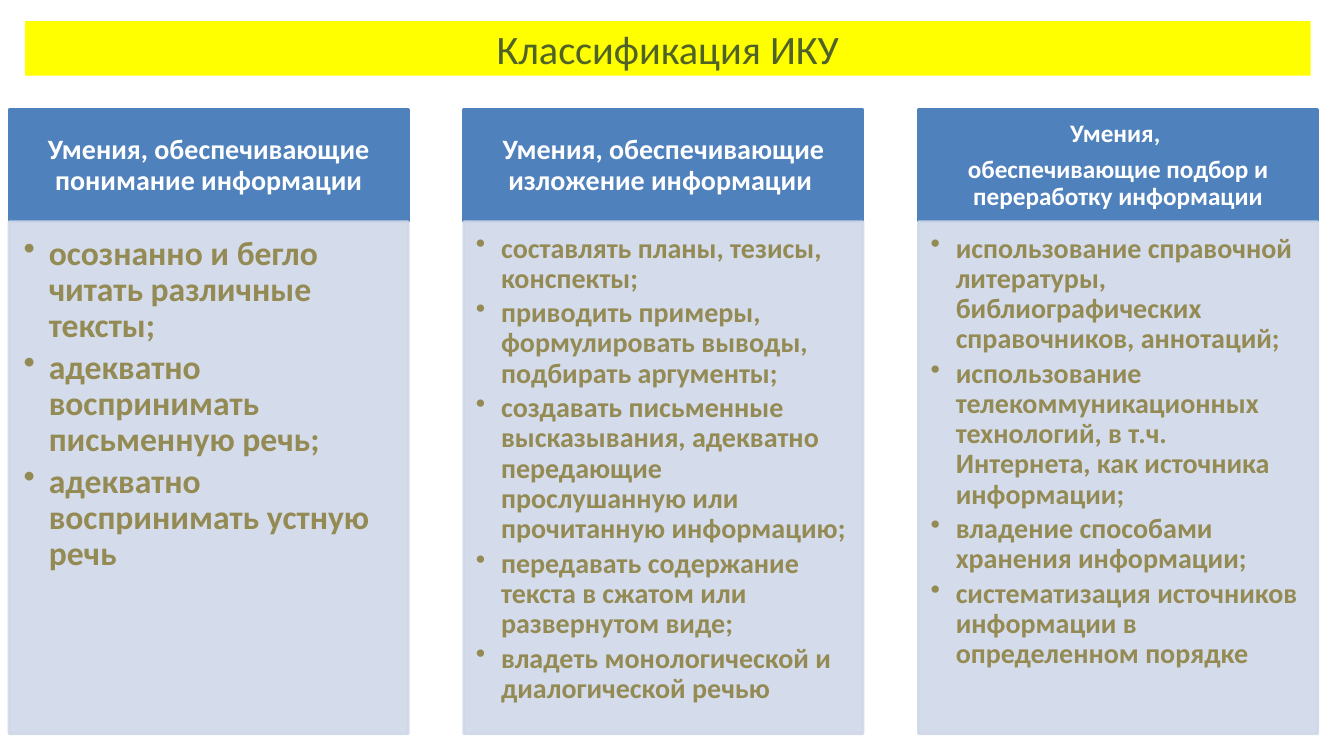
from lxml import etree
from pptx import Presentation
from pptx.dml.color import RGBColor
from pptx.enum.shapes import MSO_SHAPE
from pptx.enum.text import MSO_ANCHOR, MSO_AUTO_SIZE, PP_ALIGN
from pptx.oxml.ns import qn
from pptx.util import Inches, Pt

YELLOW = RGBColor(0xFF, 0xFF, 0x00)
GREEN = RGBColor(0x4F, 0x62, 0x28)
BLUE = RGBColor(0x4F, 0x81, 0xBD)
PALE = RGBColor(0xD0, 0xD8, 0xE8)
OLIVE = RGBColor(0x94, 0x8A, 0x54)
WHITE = RGBColor(0xFF, 0xFF, 0xFF)

LEFT, PITCH, WIDTH = 0.09, 4.51, 3.96
HEAD_TOP, HEAD_H, BODY_H = 1.09, 1.11, 5.08

COLUMNS = [
    (20, ["Умения, обеспечивающие понимание информации"],
     24, ["осознанно и бегло читать различные тексты;",
          "адекватно воспринимать письменную речь;",
          "адекватно воспринимать устную речь"]),
    (20, ["Умения, обеспечивающие изложение информации "],
     20, ["составлять планы, тезисы, конспекты;",
          "приводить примеры, формулировать выводы, подбирать аргументы;",
          "создавать письменные высказывания, адекватно передающие "
          "прослушанную или прочитанную информацию;",
          "передавать содержание текста в сжатом или развернутом виде;",
          "владеть монологической и диалогической речью"]),
    (18, ["Умения, ", "обеспечивающие подбор и переработку информации"],
     20, ["использование справочной литературы, библиографических "
          "справочников, аннотаций;",
          "использование телекоммуникационных технологий, в т.ч. Интернета, "
          "как источника информации;",
          "владение способами хранения информации;",
          "систематизация источников информации в определенном порядке"]),
]


def add_run(p, text, size, color, bold):
    r = p.add_run()
    r.text = text
    r.font.name = "Calibri"
    r.font.size = Pt(size)
    r.font.bold = bold
    r.font.color.rgb = color


def add_panel(s, x, y, h, fill, lines, size, color, insets, after, bulleted):
    sp = s.shapes.add_shape(MSO_SHAPE.RECTANGLE, Inches(x), Inches(y), Inches(WIDTH), Inches(h))
    sp.shadow.inherit = False
    sp.fill.solid()
    sp.fill.fore_color.rgb = fill
    sp.line.color.rgb = fill
    sp.line.width = Pt(2)
    if bulleted:
        for clr in sp._element.spPr.iter(qn("a:srgbClr")):
            etree.SubElement(clr, qn("a:alpha"), val="90000")
    tf = sp.text_frame
    tf.word_wrap = True
    tf.vertical_anchor = MSO_ANCHOR.TOP if bulleted else MSO_ANCHOR.MIDDLE
    tf.margin_left, tf.margin_top, tf.margin_right, tf.margin_bottom = map(Inches, insets)
    for i, text in enumerate(lines):
        p = tf.paragraphs[0] if i == 0 else tf.add_paragraph()
        p.alignment = PP_ALIGN.LEFT if bulleted else PP_ALIGN.CENTER
        p.line_spacing = 0.9
        p.space_after = Pt(size * after)
        if bulleted:
            pPr = p._p.get_or_add_pPr()
            pPr.set("marL", str(Inches(0.25)))
            pPr.set("indent", str(-Inches(0.25)))
            etree.SubElement(pPr, qn("a:buChar"), char="•")
        add_run(p, text, size, color, True)


prs = Presentation()
prs.slide_width, prs.slide_height = Inches(13.33), Inches(7.5)
s = prs.slides.add_slide(prs.slide_layouts[5])

title = s.shapes.title
title.left, title.top, title.width, title.height = map(Inches, (0.25, 0.21, 12.75, 0.54))
title.fill.solid()
title.fill.fore_color.rgb = YELLOW
tf = title.text_frame
tf.auto_size = MSO_AUTO_SIZE.NONE
tf.vertical_anchor = MSO_ANCHOR.MIDDLE
p = tf.paragraphs[0]
p.alignment = PP_ALIGN.CENTER
add_run(p, "Классификация ИКУ", 28.8, GREEN, False)

for i, (head_size, head, body_size, items) in enumerate(COLUMNS):
    x = LEFT + i * PITCH
    side, edge = head_size * 0.008, head_size * 0.0045
    pad = body_size * 0.006
    add_panel(s, x, HEAD_TOP, HEAD_H, BLUE, head, head_size, WHITE,
              (side, edge, side, edge), 0.35, False)
    add_panel(s, x, HEAD_TOP + HEAD_H, BODY_H, PALE, items, body_size, OLIVE,
              (pad, pad, pad * 4 / 3, pad * 1.45), 0.15, True)

prs.save("out.pptx")
